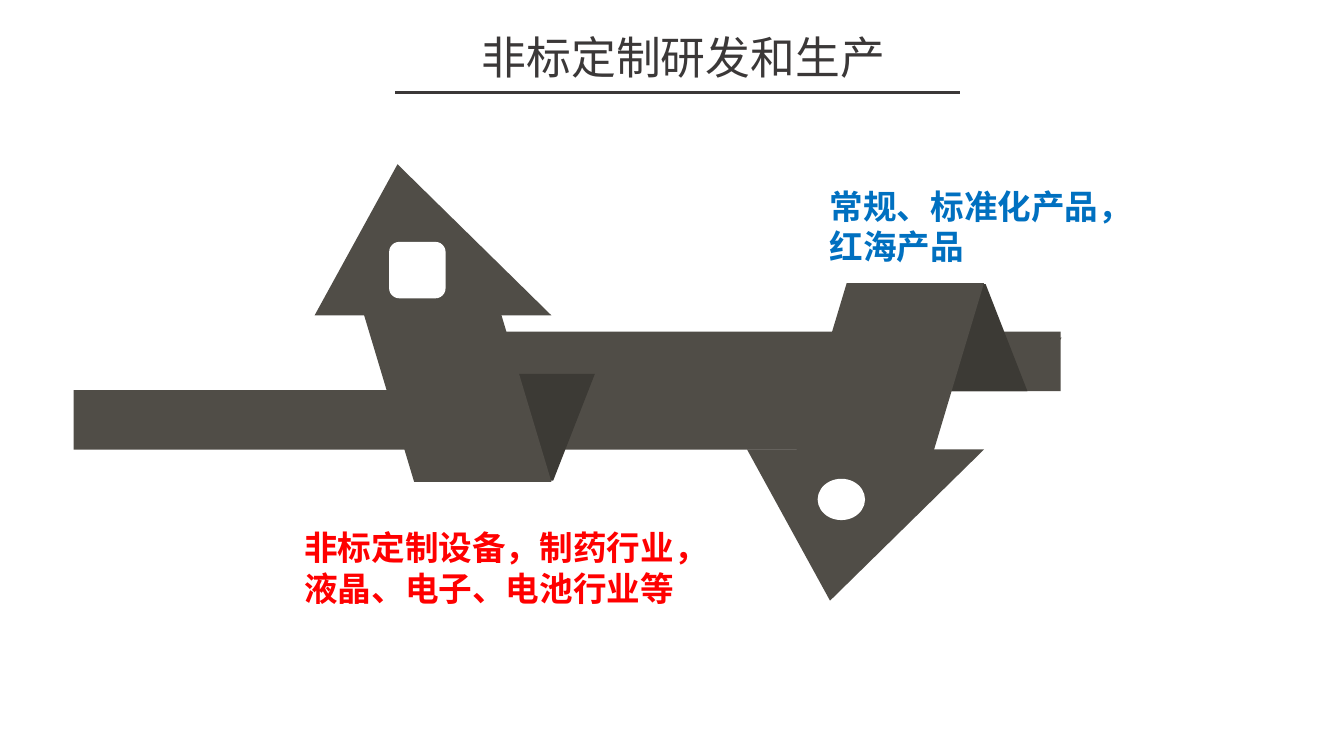
from dataclasses import dataclass

from lxml.etree import SubElement
from pptx import Presentation
from pptx.dml.color import RGBColor as RGB
from pptx.enum.shapes import MSO_CONNECTOR as LINK, MSO_SHAPE as KIND
from pptx.enum.text import MSO_ANCHOR as ANCHOR, MSO_AUTO_SIZE as FIT, PP_ALIGN as ALIGN
from pptx.oxml.ns import qn
from pptx.shapes.autoshape import Shape
from pptx.slide import Slide
from pptx.text.text import TextFrame
from pptx.util import Pt

PX = 9144  # 100 px to the inch
FONT = "Noto Sans CJK SC"
HEX = {
    "band": "504D47",
    "fold": "3C3A35",
    "icon": "FFFFFF",
    "title": "3B3838",
    "custom": "FF0000",
    "common": "0070C0",
}
SHIFT = 429  # from the up arrow to the down arrow
FLIP = 759  # top of the up arrow plus bottom of the down arrow


@dataclass
class Part:
    kind: KIND
    box: tuple[int, int, int, int]
    tint: str = "band"
    adj: float | None = None
    flip_h: bool = False
    flip_v: bool = False


@dataclass
class Note:
    box: tuple[int, int, int, int]
    lines: list[str]
    tint: str
    wrap: bool


BANDS = [
    Part(KIND.RECTANGLE, (414, 329, 638, 59)),
    Part(KIND.RECTANGLE, (73, 387, 740, 59)),
]
ARROW = [
    Part(KIND.PARALLELOGRAM, (448, 371, 176, 53), "band", 0.64, True),
    Part(KIND.PARALLELOGRAM, (414, 371, 176, 106), "fold", 0.39),
    Part(KIND.ISOSCELES_TRIANGLE, (312, 163, 235, 150), "band", 0.65, True),
    Part(KIND.PARALLELOGRAM, (361, 312, 186, 166), "band", 0.3, True),
]
ICONS = [
    Part(KIND.ROUNDED_RECTANGLE, (386, 240, 56, 56), "icon", 0.18),
    Part(KIND.OVAL, (811, 475, 47, 41), "icon"),
]
NOTES = [
    Note((292, 518, 420, 91), ["非标定制设备，制药行业，", "液晶、电子、电池行业等"], "custom", False),
    Note((813, 179, 331, 91), ["常规、标准化产品，红海产品"], "common", True),
]


def scale(*nums: int) -> list[int]:
    return [n * PX for n in nums]


def color(name: str) -> RGB:
    return RGB.from_string(HEX[name])


def mirror(part: Part) -> Part:
    """Turn a part of the up arrow into its match on the down arrow."""
    x, y, w, h = part.box
    box = (x + SHIFT, FLIP - y - h, w, h)
    return Part(part.kind, box, part.tint, part.adj, part.flip_h, True)


def draw(slide: Slide, part: Part) -> Shape:
    shape = slide.shapes.add_shape(part.kind, *scale(*part.box))
    shape.shadow.inherit = False
    shape.fill.solid()
    shape.fill.fore_color.rgb = color(part.tint)
    shape.line.fill.background()
    if part.adj is not None:
        shape.adjustments[0] = part.adj
    for key, on in {"flipH": part.flip_h, "flipV": part.flip_v}.items():
        if on:
            shape._element.spPr.xfrm.set(key, "1")
    return shape


def write(frame: TextFrame, lines: list[str], tint: str, size: int, bold: bool,
          align: ALIGN, wrap: bool) -> None:
    look = {"word_wrap": wrap, "auto_size": FIT.NONE, "vertical_anchor": ANCHOR.TOP}
    for key, val in look.items():
        setattr(frame, key, val)
    for i, line in enumerate(lines):
        para = frame.add_paragraph() if i else frame.paragraphs[0]
        para.alignment = align
        run = para.add_run()
        run.text = line
        run.font.color.rgb = color(tint)
        for key, val in {"name": FONT, "size": Pt(size), "bold": bold}.items():
            setattr(run.font, key, val)
        SubElement(run._r.get_or_add_rPr(), qn("a:ea"), typeface=FONT)


def head(slide: Slide) -> None:
    title = slide.shapes.title
    spot = zip(("left", "top", "width", "height"), scale(375, 24, 606, 64))
    for key, val in spot:
        setattr(title, key, val)
    write(title.text_frame, ["非标定制研发和生产"], "title", 32, False, ALIGN.CENTER, True)
    rule = slide.shapes.add_connector(LINK.STRAIGHT, *scale(392, 92, 952, 92))
    rule.line.color.rgb = color("title")
    rule.line.width = Pt(2)
    SubElement(rule._element.spPr, qn("a:effectLst"))


def main() -> None:
    deck = Presentation()
    deck.slide_width, deck.slide_height = scale(1333, 750)
    slide = deck.slides.add_slide(deck.slide_layouts[5])
    for part in BANDS + ARROW + [mirror(p) for p in ARROW] + ICONS:
        draw(slide, part)
    for note in NOTES:
        box = slide.shapes.add_textbox(*scale(*note.box))
        write(box.text_frame, note.lines, note.tint, 24, True, ALIGN.LEFT, note.wrap)
    head(slide)
    deck.save("out.pptx")


if __name__ == "__main__":
    main()
